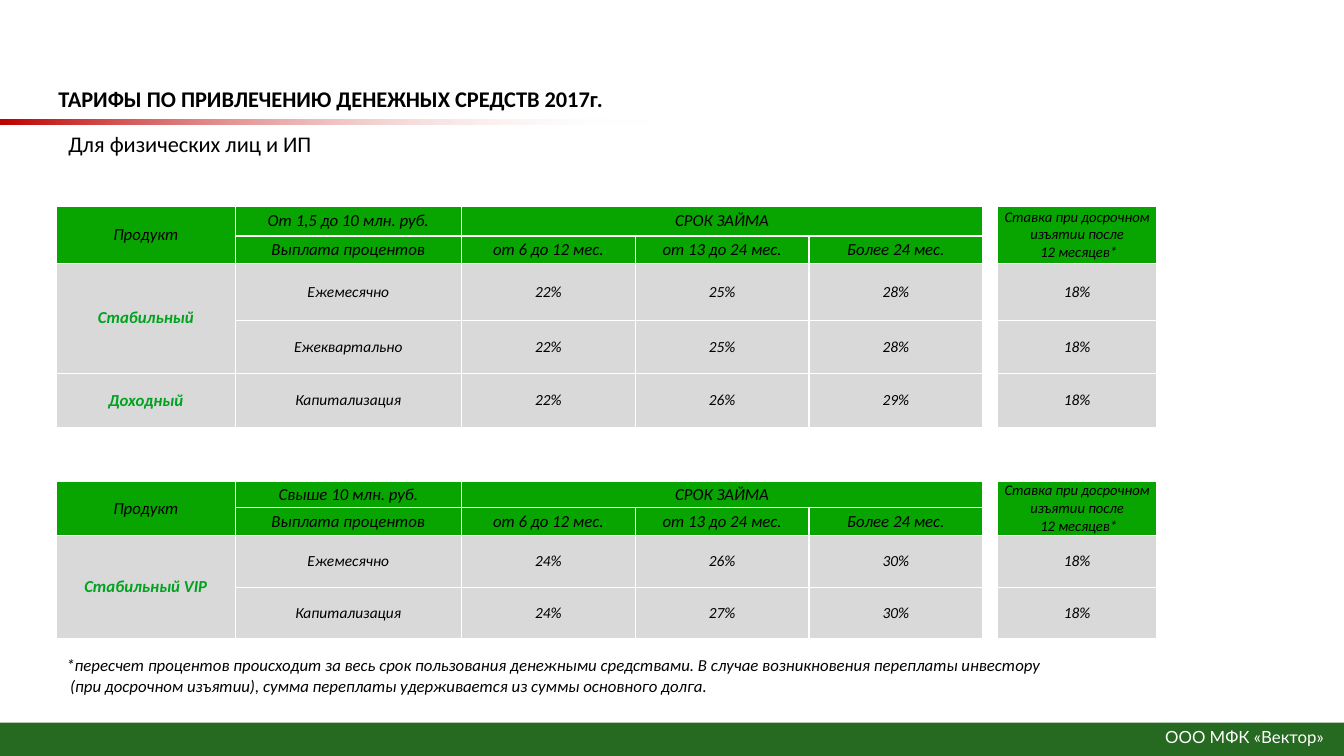
from dataclasses import dataclass

from lxml.etree import SubElement
from pptx import Presentation
from pptx.dml.color import RGBColor
from pptx.enum.shapes import MSO_SHAPE
from pptx.enum.text import MSO_ANCHOR, PP_ALIGN
from pptx.oxml.ns import qn
from pptx.util import Inches, Pt


@dataclass(frozen=True)
class Theme:
    body_font: str = "Calibri"
    footer_font: str = "Lato"
    black: str = "000000"
    white: str = "FFFFFF"
    red: str = "C00000"
    footer_green: str = "266921"
    header_green: str = "08A400"
    product_green: str = "00A21F"
    grey: str = "D9D9D9"
    title_size: float = 16
    text_size: float = 12
    rate_size: float = 11
    note_size: float = 10.5
    empty_size: float = 1
    border: float = 1


class Page:
    """Places elements by left, top, width and height in percent of the slide."""

    def __init__(self, deck, theme):
        self.deck = deck
        self.theme = theme
        self.slide = deck.slides.add_slide(deck.slide_layouts[6])

    def place(self, left, top, width, height):
        wide, high = self.deck.slide_width, self.deck.slide_height
        return [int(share * full / 100) for share, full in
                zip((left, top, width, height), (wide, high, wide, high))]

    def add_spans(self, para, text, size, color=None, font=None, bold=False, italic=False):
        """Adds a run for each line of the text, with line breaks between them."""
        for number, line in enumerate(text.split("\n")):
            if number:
                para.add_line_break()
            span = para.add_run()
            span.text = line
            span.font.name = font or self.theme.body_font
            span.font.size = Pt(size)
            span.font.bold = bold
            span.font.italic = italic
            span.font.color.rgb = RGBColor.from_string(color or self.theme.black)

    def text(self, area, lines, size, align=PP_ALIGN.LEFT, **style):
        frame = self.slide.shapes.add_textbox(*self.place(*area)).text_frame
        frame.word_wrap = True
        for number, line in enumerate(lines):
            para = frame.add_paragraph() if number else frame.paragraphs[0]
            para.alignment = align
            self.add_spans(para, line, size, **style)

    def bar(self, area, color, fades=False):
        box = self.slide.shapes.add_shape(MSO_SHAPE.RECTANGLE, *self.place(*area))
        box.shadow.inherit = False
        box.line.fill.background()
        if not fades:
            box.fill.solid()
            box.fill.fore_color.rgb = RGBColor.from_string(color)
            return
        box.fill.gradient()
        box.fill.gradient_angle = 0
        for stop, shade in zip(box.fill.gradient_stops, (color, self.theme.white)):
            stop.color.rgb = RGBColor.from_string(shade)
        last_color = list(box._element.iter(qn("a:srgbClr")))[-1]
        SubElement(last_color, qn("a:alpha"), val="0")

    def table(self, area, columns, rows):
        """Adds an empty white table whose columns and rows share the area by weight."""
        left, top, width, height = self.place(*area)
        table = self.slide.shapes.add_table(
            len(rows), len(columns), left, top, width, height).table
        table.first_row = table.horz_banding = False
        for column, weight in zip(table.columns, columns):
            column.width = int(width * weight / sum(columns))
        for row, weight in zip(table.rows, rows):
            row.height = int(height * weight / sum(rows))
        for cell in table.iter_cells():
            self.prepare(cell)
        return table

    def prepare(self, cell):
        """Gives a cell white borders, no margins and a line too small to stretch its row."""
        cell.margin_left = cell.margin_right = cell.margin_top = cell.margin_bottom = 0
        cell.vertical_anchor = MSO_ANCHOR.MIDDLE
        properties = cell._tc.get_or_add_tcPr()
        for side in ("lnL", "lnR", "lnT", "lnB"):
            line = SubElement(properties, qn(f"a:{side}"), w=str(Pt(self.theme.border)))
            solid = SubElement(line, qn("a:solidFill"))
            SubElement(solid, qn("a:srgbClr"), val=self.theme.white)
        cell.fill.solid()
        cell.fill.fore_color.rgb = RGBColor.from_string(self.theme.white)
        para = cell.text_frame.paragraphs[0]
        SubElement(para._p, qn("a:endParaRPr"), sz=str(int(self.theme.empty_size * 100)))

    def merge(self, table, row, column, down=1, across=1):
        cell = table.cell(row, column)
        if down * across > 1:
            cell.merge(table.cell(row + down - 1, column + across - 1))
        return cell

    def cell(self, table, row, column, text, fill, size, down=1, across=1, **style):
        cell = self.merge(table, row, column, down, across)
        cell.fill.fore_color.rgb = RGBColor.from_string(fill)
        para = cell.text_frame.paragraphs[0]
        para.alignment = PP_ALIGN.CENTER
        para._p.remove(para._p.find(qn("a:endParaRPr")))
        self.add_spans(para, text, size, italic=True, **style)

    def tariff(self, table, top, amount, products):
        """Fills one tariff block; products hold a name and its payment lines with rates."""
        theme = self.theme

        def header(row, column, text, size=theme.text_size, **spans):
            self.cell(table, row, column, text, theme.header_green, size, **spans)

        header(top, 0, "Продукт", down=2)
        header(top, 1, amount)
        header(top, 2, "СРОК ЗАЙМА", across=3)
        header(top, 6, "Ставка при досрочном изъятии после\n 12 месяцев*",
               theme.note_size, down=2)
        labels = ("Выплата процентов", "от 6 до 12 мес.", "от 13 до 24 мес.", "Более 24 мес.")
        for column, label in enumerate(labels, 1):
            header(top + 1, column, label)

        row = top + 2
        for name, payments in products:
            height = sum(down for down, *_ in payments)
            self.cell(table, row, 0, name, theme.grey, theme.text_size, down=height,
                      color=theme.product_green, bold=True)
            for down, *values in payments:
                for column, value in zip((1, 2, 3, 4, 6), values):
                    self.cell(table, row, column, value, theme.grey, theme.rate_size, down=down)
                row += down


COLUMNS = (1.77, 2.24, 1.72, 1.72, 1.72, 0.15, 1.57)
ROWS = (0.22, 0.23, 0.29, 0.27, 0.57, 0.52, 0.37, 0.17,
        0.19, 0.15, 0.19, 0.26, 0.28, 0.51, 0.51)
# Each payment line: rows taken, payment, three rates by term, early withdrawal rate
STANDARD = (
    ("Стабильный", ((1, "Ежемесячно", "22%", "25%", "28%", "18%"),
                    (1, "Ежеквартально", "22%", "25%", "28%", "18%"))),
    ("Доходный", ((2, "Капитализация", "22%", "26%", "29%", "18%"),)),
)
VIP = (
    ("Стабильный VIP", ((1, "Ежемесячно", "24%", "26%", "30%", "18%"),
                        (1, "Капитализация", "24%", "27%", "30%", "18%"))),
)


def main():
    deck = Presentation()
    deck.slide_width, deck.slide_height = Inches(13.33), Inches(7.5)
    theme = Theme()
    page = Page(deck, theme)

    page.bar((0, 95.6, 100, 4.4), theme.footer_green)
    page.text((85.15, 95.47, 14.1, 4), ["ООО МФК «Вектор»"], theme.text_size,
              PP_ALIGN.RIGHT, color=theme.white, font=theme.footer_font)
    page.bar((0, 15.87, 48.4, 0.67), theme.red, fades=True)
    page.text((3.6, 10.6, 45.6, 9.47), ["ТАРИФЫ ПО ПРИВЛЕЧЕНИЮ ДЕНЕЖНЫХ СРЕДСТВ 2017г."],
              theme.title_size, bold=True)

    table = page.table((4.2, 21.33, 81.85, 63.2), COLUMNS, ROWS)
    page.merge(table, 1, 5, down=6)
    page.merge(table, 7, 5, down=8)
    page.merge(table, 8, 6, down=2)
    for column in range(5):
        page.merge(table, 9, column, down=2)
    page.tariff(table, 2, "От 1,5 до 10 млн. руб.", STANDARD)
    page.tariff(table, 11, "Свыше 10 млн. руб.", VIP)

    page.text((4.2, 86, 83.4, 6.8), [
        "*пересчет процентов происходит за весь срок пользования денежными средствами. "
        "В случае возникновения переплаты инвестору",
        " (при досрочном изъятии), сумма переплаты удерживается из суммы основного долга.",
    ], theme.text_size, italic=True)
    page.text((4.35, 16.6, 45.6, 9.47), ["Для физических лиц и ИП"], theme.title_size)
    deck.save("out.pptx")


if __name__ == "__main__":
    main()
